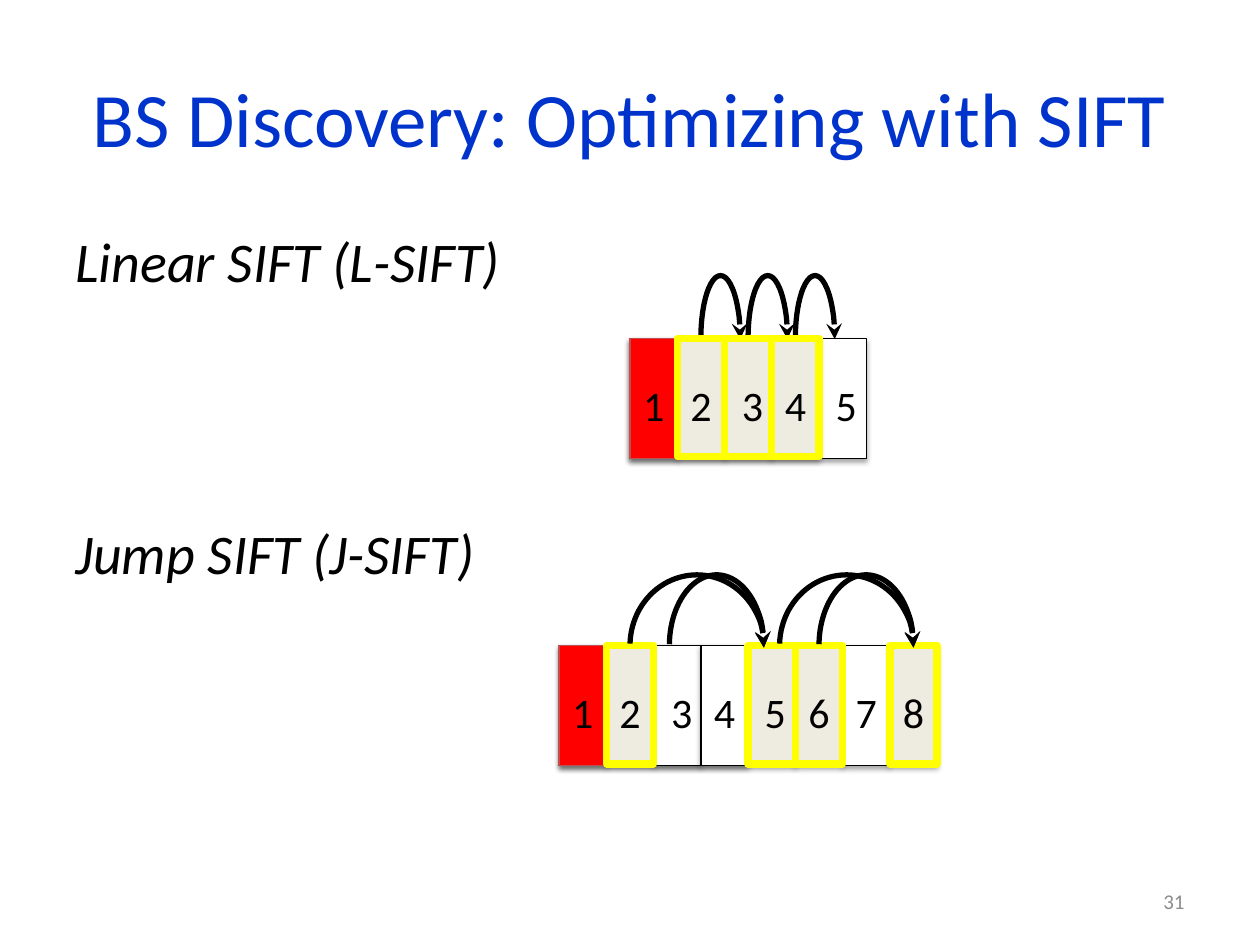
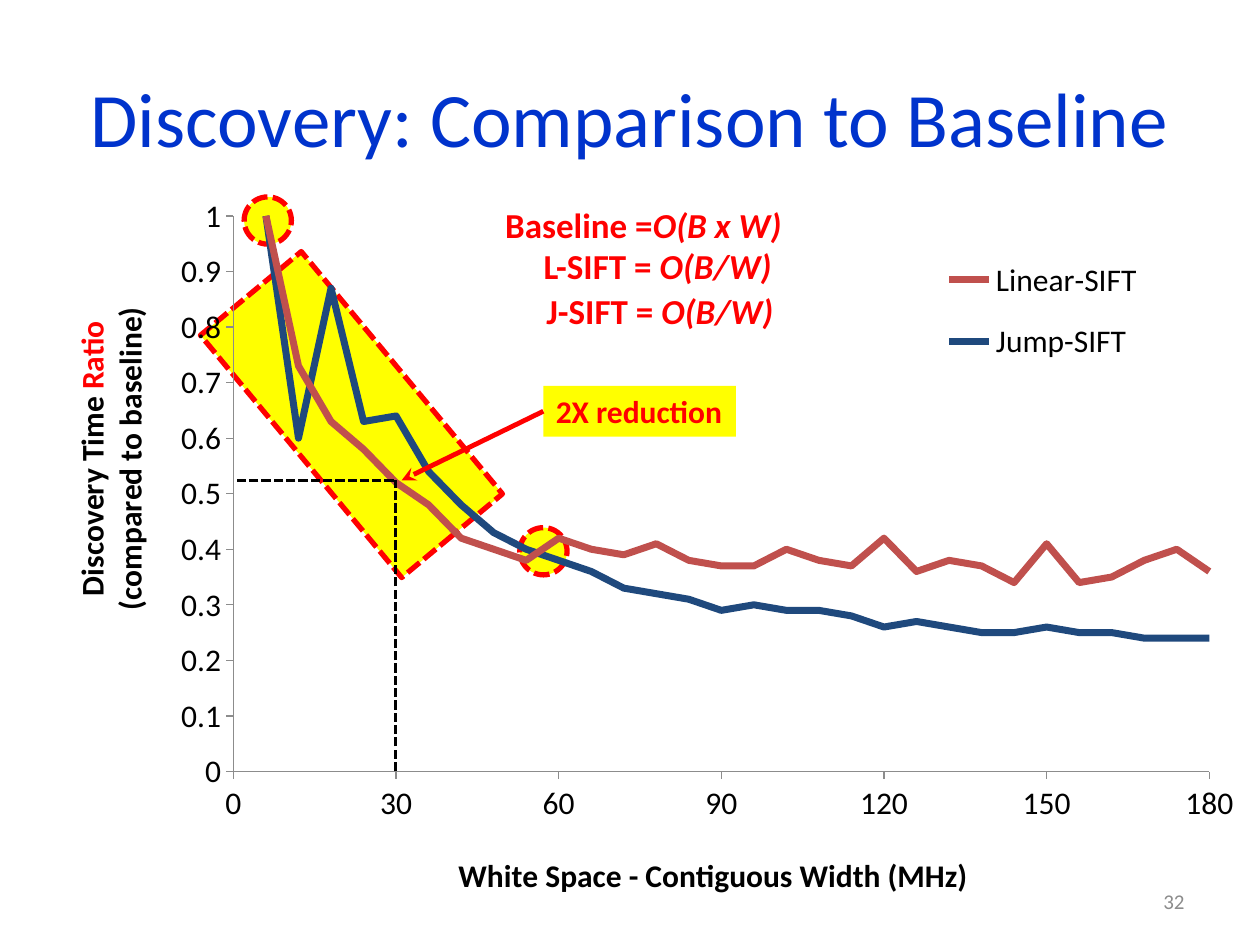
from lxml.etree import SubElement
from pptx import Presentation
from pptx.chart.data import XyChartData
from pptx.dml.color import RGBColor
from pptx.enum.chart import XL_CHART_TYPE as CHART, XL_LEGEND_POSITION as LEGEND, XL_TICK_MARK as TICK
from pptx.enum.dml import MSO_LINE
from pptx.enum.shapes import MSO_CONNECTOR, MSO_SHAPE as SHAPE
from pptx.enum.text import MSO_ANCHOR as ANCHOR, MSO_AUTO_SIZE as FIT, PP_ALIGN as ALIGN
from pptx.oxml import parse_xml
from pptx.oxml.ns import nsdecls, qn
from pptx.util import Pt

BLUE = RGBColor(0x00, 0x33, 0xCC)
BLACK = RGBColor(0x00, 0x00, 0x00)
WHITE = RGBColor(0xFF, 0xFF, 0xFF)
GRAY = RGBColor(0x8C, 0x8C, 0x8C)
RED = RGBColor(0xFF, 0x00, 0x00)
YELLOW = RGBColor(0xFF, 0xFF, 0x00)
CREAM = RGBColor(0xEE, 0xEC, 0xE1)
BRICK = RGBColor(0xC0, 0x50, 0x4D)
NAVY = RGBColor(0x1F, 0x49, 0x7D)

CELL_W, CELL_H = 27, 68.4
LABEL_NUDGE = {3: 2.5, 5: 2}  # points added to the left of a digit

WIDTHS = range(6, 181, 6)
LINEAR = [1, 0.73, 0.63, 0.58, 0.52, 0.48, 0.42, 0.4, 0.38, 0.42,
          0.4, 0.39, 0.41, 0.38, 0.37, 0.37, 0.4, 0.38, 0.37, 0.42,
          0.36, 0.38, 0.37, 0.34, 0.41, 0.34, 0.35, 0.38, 0.4, 0.36]
JUMP = [1, 0.6, 0.87, 0.63, 0.64, 0.54, 0.48, 0.43, 0.4, 0.38,
        0.36, 0.33, 0.32, 0.31, 0.29, 0.3, 0.29, 0.29, 0.28, 0.26,
        0.27, 0.26, 0.25, 0.25, 0.26, 0.25, 0.25, 0.24, 0.24, 0.24]


def set_layout(parent, x, y, w=None, h=None):
    """Give a chart title or legend element a manual position, in fractions of the chart."""
    for old in parent.findall(qn("c:layout")):
        parent.remove(old)
    layout = parse_xml(f"<c:layout {nsdecls('c')}><c:manualLayout/></c:layout>")
    manual = layout[0]
    for tag in ("xMode", "yMode"):
        SubElement(manual, qn(f"c:{tag}")).set("val", "edge")
    for tag, value in zip("xywh", (x, y, w, h)):
        if value is not None:
            SubElement(manual, qn(f"c:{tag}")).set("val", str(value))
    before = [e for e in parent if e.tag in (qn("c:tx"), qn("c:legendPos"))]
    before[-1].addnext(layout)


class Deck:
    FONT = "Calibri"

    def __init__(self):
        self.prs = Presentation()
        self.prs.slide_width, self.prs.slide_height = Pt(720), Pt(540)
        self.slide = None

    def new_slide(self, title, number):
        self.slide = self.prs.slides.add_slide(self.prs.slide_layouts[5])
        sp = self.slide.shapes.title
        sp.left, sp.top, sp.width, sp.height = Pt(36), Pt(21.6), Pt(648), Pt(90)
        sp.text_frame.vertical_anchor = ANCHOR.MIDDLE
        p = sp.text_frame.paragraphs[0]
        p.alignment = ALIGN.CENTER
        self.run(p, title, 44, BLUE)
        self.text(516, 500.4, 168, 28.8, [str(number)], 12, GRAY,
                  align=ALIGN.RIGHT, anchor=ANCHOR.MIDDLE)

    def run(self, p, text, size, color, bold=False, italic=False):
        r = p.add_run()
        r.text = text
        f = r.font
        f.name, f.size, f.bold, f.italic = self.FONT, Pt(size), bold, italic
        f.color.rgb = color

    def text(self, x, y, w, h, parts, size, color=BLACK, bold=False, italics=(),
             align=ALIGN.LEFT, anchor=ANCHOR.TOP, wrap=True, fill=None):
        """Add a one-line text box; italics holds the indexes of the italic parts."""
        sp = self.slide.shapes.add_textbox(Pt(x), Pt(y), Pt(w), Pt(h))
        if fill is not None:
            sp.fill.solid()
            sp.fill.fore_color.rgb = fill
        tf = sp.text_frame
        tf.word_wrap, tf.auto_size, tf.vertical_anchor = wrap, FIT.NONE, anchor
        p = tf.paragraphs[0]
        p.alignment = align
        for i, part in enumerate(parts):
            self.run(p, part, size, color, bold, i in italics)
        return sp

    def style_line(self, sp, color, width, dashed=False, arrow=False):
        sp.line.color.rgb, sp.line.width = color, Pt(width)
        if dashed:
            sp.line.dash_style = MSO_LINE.SQUARE_DOT
        if arrow:
            ln = sp.element.spPr.find(qn("a:ln"))
            SubElement(ln, qn("a:tailEnd")).set("type", "stealth")

    def shape(self, kind, x, y, w, h, fill, line, width, dashed=False, arrow=False,
              shadow=False, angle=0):
        sp = self.slide.shapes.add_shape(kind, Pt(x), Pt(y), Pt(w), Pt(h))
        sp.rotation = angle
        if fill is None:
            sp.fill.background()
        else:
            sp.fill.solid()
            sp.fill.fore_color.rgb = fill
        self.style_line(sp, line, width, dashed, arrow)
        sp.shadow.inherit = False
        if shadow:
            sp.element.spPr.find(qn("a:effectLst")).append(parse_xml(
                f'<a:outerShdw {nsdecls("a")} blurRad="{Pt(3.1)}" dist="{Pt(1.8)}" dir="5400000" '
                'rotWithShape="0"><a:srgbClr val="000000"><a:alpha val="35000"/>'
                '</a:srgbClr></a:outerShdw>'))
        return sp

    def arc_arrow(self, x, y, w, h):
        sp = self.shape(SHAPE.ARC, x, y, w, h, None, BLACK, 3, arrow=True)
        sp.adjustments[0], sp.adjustments[1] = 109.09, 1.07

    def line(self, x1, y1, x2, y2, color, width, dashed=False, arrow=False, start=None):
        """Add a straight line; start is a shape whose left side it leaves from."""
        cn = self.slide.shapes.add_connector(MSO_CONNECTOR.STRAIGHT,
                                             Pt(x1), Pt(y1), Pt(x2), Pt(y2))
        if start is not None:
            cn.begin_connect(start, 1)
        self.style_line(cn, color, width, dashed, arrow)
        SubElement(cn.element.spPr, qn("a:effectLst"))

    def channels(self, x, y, count, found, arcs):
        """Draw a row of numbered channels, with the found ones highlighted."""
        def box(i, span=1, fill=WHITE, line=BLACK):
            self.shape(SHAPE.RECTANGLE, x + i * CELL_W, y, span * CELL_W, CELL_H,
                       fill, line, 0.75, shadow=True)

        box(0, span=5)
        box(0, fill=RED, line=BRICK)
        for i in range(1, count):
            if i != 4:
                box(i)
        for arc in arcs:
            self.arc_arrow(*arc)
        for n in found:
            self.shape(SHAPE.RECTANGLE, x + (n - 1) * CELL_W, y, CELL_W, 67.5,
                       CREAM, YELLOW, 4.25)
        for n in range(1, count + 1):
            left = x + (n - 1) * CELL_W + 0.4 + LABEL_NUDGE.get(n, 0)
            self.text(left, y + 19.6, 22.3, 36, [str(n)], 24, align=ALIGN.CENTER)

    def axis(self, axis, top, step, title_lines, title_at):
        axis.minimum_scale, axis.maximum_scale, axis.major_unit = 0, top, step
        axis.has_major_gridlines = False
        axis.major_tick_mark, axis.minor_tick_mark = TICK.OUTSIDE, TICK.NONE
        axis.tick_labels.number_format = "General"
        axis.tick_labels.number_format_is_linked = False
        axis.format.line.color.rgb, axis.format.line.width = GRAY, Pt(0.75)
        tf = axis.axis_title.text_frame
        for i, parts in enumerate(title_lines):
            p = tf.add_paragraph() if i else tf.paragraphs[0]
            for text, color in parts:
                self.run(p, text, 18, color, bold=True)
        set_layout(axis.axis_title._element, *title_at)

    def ratio_chart(self, x, y, w, h):
        data = XyChartData()
        for name, ratios in (("Linear-SIFT", LINEAR), ("Jump-SIFT", JUMP)):
            series = data.add_series(name)
            for width, ratio in zip(WIDTHS, ratios):
                series.add_data_point(width, ratio)
        chart = self.slide.shapes.add_chart(CHART.XY_SCATTER_LINES_NO_MARKERS,
                                            Pt(x), Pt(y), Pt(w), Pt(h), data).chart
        chart.has_title = False
        chart.font.name, chart.font.size = self.FONT, Pt(18)
        chart.font.color.rgb = BLACK
        plot = chart.plots[0]
        plot.vary_by_categories = False
        for series, color in zip(plot.series, (BRICK, NAVY)):
            series.smooth = False
            series.format.line.color.rgb, series.format.line.width = color, Pt(4)

        self.axis(chart.category_axis, 180, 30,
                  [[("White Space - Contiguous Width (MHz)", BLACK)]], (0.33, 0.91))
        self.axis(chart.value_axis, 1, 0.1,
                  [[("Discovery Time ", BLACK), ("Ratio", RED)],
                   [("(compared to baseline)", BLACK)]], (0.01, 0.17))
        rich = chart.value_axis.axis_title.text_frame._txBody
        rich.find(qn("a:bodyPr")).set("rot", "-5400000")
        rich.find(qn("a:bodyPr")).set("vert", "horz")

        chart.has_legend = True
        chart.legend.position, chart.legend.include_in_layout = LEGEND.RIGHT, False
        set_layout(chart.legend._element, 0.71, 0.08, 0.22, 0.2)

        area = chart.element.find(qn("c:chart"))
        plot_area = area.find(qn("c:plotArea"))
        for old in plot_area.findall(qn("c:layout")):
            plot_area.remove(old)
        plot_area.insert(0, parse_xml(
            f'<c:layout {nsdecls("c")}><c:manualLayout><c:layoutTarget val="inner"/>'
            '<c:xMode val="edge"/><c:yMode val="edge"/><c:x val="0.148"/><c:y val="0.051"/>'
            '<c:w val="0.81"/><c:h val="0.756"/></c:manualLayout></c:layout>'))
        clear = (f'<c:spPr {nsdecls("c", "a")}><a:noFill/>'
                 '<a:ln><a:noFill/></a:ln></c:spPr>')
        plot_area.append(parse_xml(clear))
        area.addnext(parse_xml(clear))


def sift_slide(deck):
    deck.new_slide("BS Discovery: Optimizing with SIFT", 31)
    for y, heading in ((126, "Linear SIFT (L-SIFT)"), (292.5, "Jump SIFT (J-SIFT)")):
        deck.text(36, y, 648, 49.5, [heading], 32, italics=(0,))
    deck.channels(360, 193.5, 5, (2, 3, 4),
                  [(400.5 + i * CELL_W, 157.5, 22.5, 72) for i in range(3)])
    deck.channels(319.5, 369, 8, (2, 5, 6, 8), [])
    for right in (436.5, 522):
        for w in (76.5, 54):
            deck.arc_arrow(right - w, 328.5, w, 81)


def comparison_slide(deck):
    deck.new_slide("Discovery: Comparison to Baseline", 32)
    mark = dict(fill=YELLOW, line=RED, width=3, dashed=True)
    deck.shape(SHAPE.RECTANGLE, 163.4, 146.9, 74.9, 180, angle=320.3, **mark)
    for x, y in ((139.5, 112.5), (297, 301.5)):
        deck.shape(SHAPE.OVAL, x, y, 27, 27, **mark)
    deck.ratio_chart(31.5, 102, 688.5, 420)
    for x, y, name, cost in ((230.4, 112.5, "Baseline =", "Ο(B x W) "),
                             (238.5, 136.1, "L-SIFT = ", "Ο(B/W) "),
                             (239.8, 162, "J-SIFT = ", "Ο(B/W) ")):
        deck.text(x, y, 279, 31.5, [name, cost], 20, RED, bold=True, italics=(1,),
                  align=ALIGN.CENTER)
    deck.line(226, 440.6, 226, 274.5, BLACK, 1.75, dashed=True)
    deck.line(225, 274.5, 134, 274.5, BLACK, 1.75, dashed=True)
    note = deck.text(310.5, 220.5, 110, 29, ["2X reduction"], 18, RED, bold=True,
                     wrap=False, fill=YELLOW)
    deck.line(310.5, 235, 229.5, 274.5, RED, 2.75, arrow=True, start=note)


def main():
    deck = Deck()
    sift_slide(deck)
    comparison_slide(deck)
    deck.prs.save("out.pptx")


if __name__ == "__main__":
    main()
